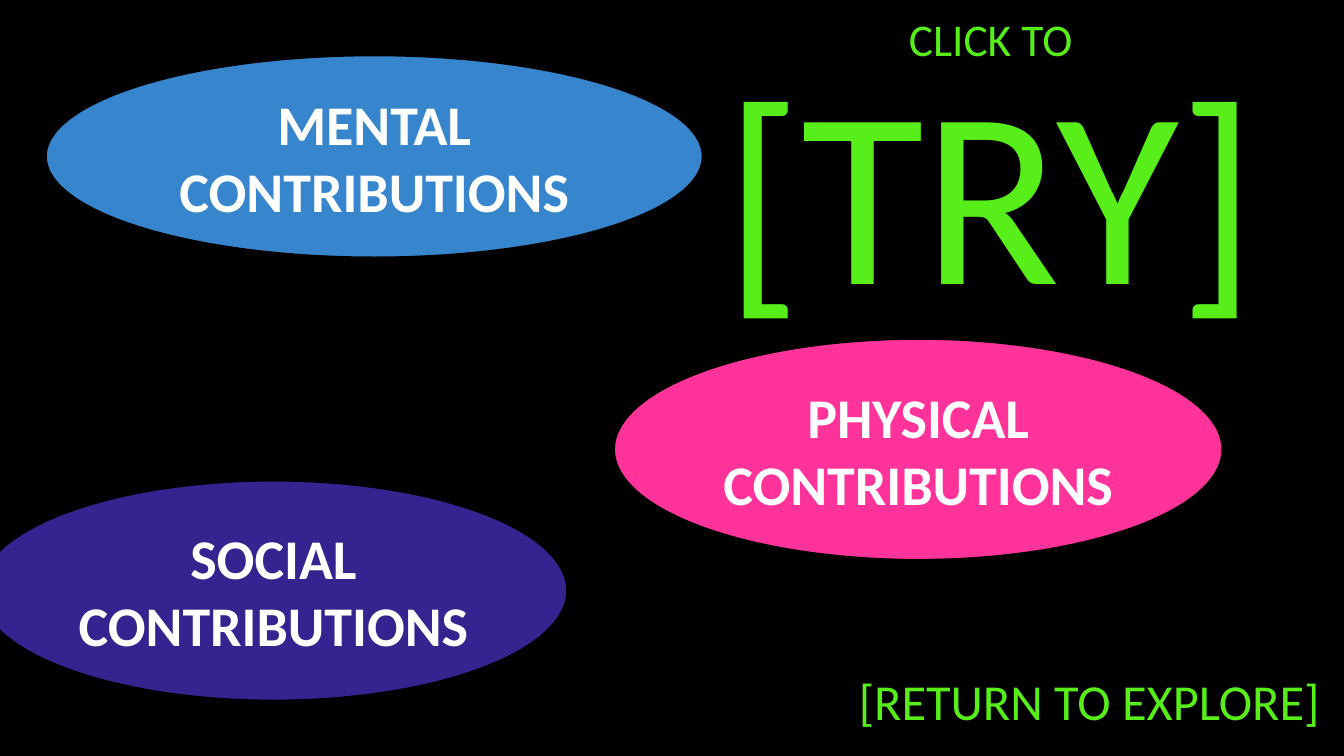
from dataclasses import dataclass

from pptx import Presentation
from pptx.dml.color import RGBColor
from pptx.enum.shapes import MSO_SHAPE
from pptx.enum.text import MSO_ANCHOR, PP_ALIGN
from pptx.slide import Slide
from pptx.text.text import TextFrame
from pptx.util import Emu, Pt

OVAL = MSO_SHAPE.OVAL
MIDDLE, TOP = MSO_ANCHOR.MIDDLE, MSO_ANCHOR.TOP
CENTER = PP_ALIGN.CENTER

PX = 9525  # EMU in one px, 96 px to the inch
FONT = "Calibri"
BLACK, WHITE, GREEN = "000000", "FFFFFF", "57EE1A"


@dataclass
class Box:
    left: int
    top: int
    width: int
    height: int

    def emu(self) -> list[Emu]:
        return [Emu(n * PX) for n in (self.left, self.top, self.width, self.height)]


@dataclass
class Line:
    text: str
    size: float
    color: str = GREEN
    bold: bool = False


@dataclass
class Label:
    box: Box
    lines: list[Line]
    anchor: MSO_ANCHOR
    spacing: float = 1.0


@dataclass
class Bubble:
    box: Box
    text: str
    fill: str


LABELS = [
    Label(Box(617, 17, 653, 305), [Line("CLICK TO", 32.4), Line("[TRY]", 180)], MIDDLE, 0.9),
    Label(Box(794, 633, 487, 68), [Line("[RETURN TO EXPLORE]", 36)], TOP),
]

BUBBLES = [
    Bubble(Box(44, 53, 625, 192), "MENTAL CONTRIBUTIONS", "3786CD"),
    Bubble(Box(-19, 458, 559, 209), "SOCIAL CONTRIBUTIONS", "332490"),
    Bubble(Box(585, 323, 579, 210), "PHYSICAL CONTRIBUTIONS", "FF3399"),
]


def rgb(code: str) -> RGBColor:
    return RGBColor.from_string(code)


def write(frame: TextFrame, lines: list[Line], anchor: MSO_ANCHOR, spacing: float = 1.0) -> None:
    frame.word_wrap = True
    frame.vertical_anchor = anchor
    for i, line in enumerate(lines):
        para = frame.add_paragraph() if i else frame.paragraphs[0]
        para.text = line.text
        para.alignment = CENTER
        para.line_spacing = spacing
        font = para.font
        font.name, font.size, font.bold = FONT, Pt(line.size), line.bold
        font.color.rgb = rgb(line.color)


def add_label(slide: Slide, label: Label) -> None:
    box = slide.shapes.add_textbox(*label.box.emu())
    write(box.text_frame, label.lines, label.anchor, label.spacing)


def add_bubble(slide: Slide, bubble: Bubble) -> None:
    oval = slide.shapes.add_shape(OVAL, *bubble.box.emu())
    oval.shadow.inherit = False
    oval.fill.solid()
    oval.fill.fore_color.rgb = rgb(bubble.fill)
    oval.line.color.rgb = rgb(BLACK)
    oval.line.width = Pt(1)
    write(oval.text_frame, [Line(bubble.text, 40, WHITE, True)], MIDDLE)


def main() -> None:
    deck = Presentation()
    deck.slide_width, deck.slide_height = Emu(1280 * PX), Emu(720 * PX)
    slide = deck.slides.add_slide(deck.slide_layouts[6])

    # Black background
    back = slide.background.fill
    back.solid()
    back.fore_color.rgb = rgb(BLACK)

    # Green title and return label
    for label in LABELS:
        add_label(slide, label)

    # Contribution bubbles
    for bubble in BUBBLES:
        add_bubble(slide, bubble)

    deck.save("out.pptx")


if __name__ == "__main__":
    main()
